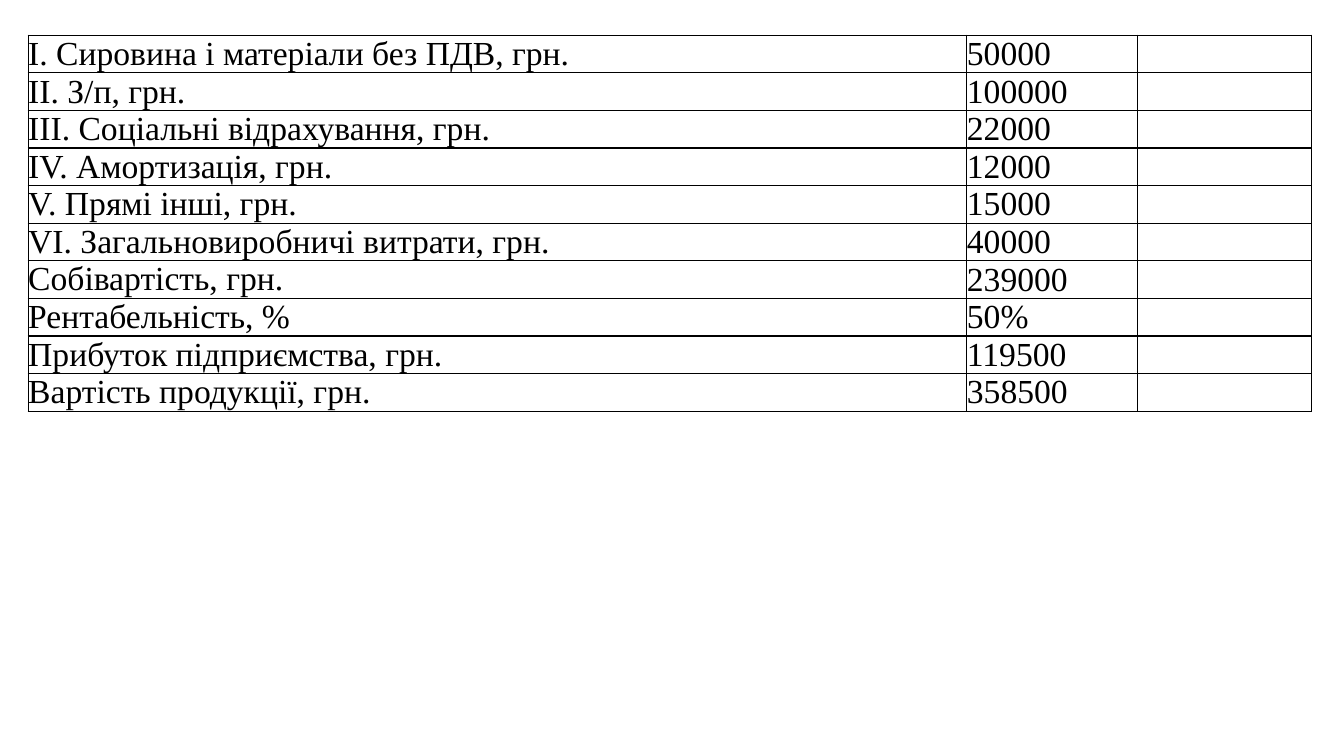
from lxml.etree import SubElement as Sub
from pptx import Presentation
from pptx.dml.color import RGBColor
from pptx.enum.text import MSO_ANCHOR as Anchor
from pptx.oxml.ns import qn
from pptx.util import Inches, Pt

BLACK = RGBColor(0, 0, 0)
COLS = (9.31, 1.69, 1.73)
COSTS = [
    ("І. Сировина і матеріали без ПДВ, грн.", "50000"),
    ("ІІ. З/п, грн.", "100000"),
    ("ІІІ. Соціальні відрахування, грн.", "22000"),
    ("ІV. Амортизація, грн.", "12000"),
    ("V. Прямі інші, грн.", "15000"),
    ("VІ. Загальновиробничі витрати, грн.", "40000"),
    ("Собівартість, грн.", "239000"),
    ("Рентабельність, %", "50%"),
    ("Прибуток підприємства, грн.", "119500"),
    ("Вартість продукції, грн.", "358500"),
]
FONT = {"name": "Times New Roman", "size": Pt(24), "bold": False}
INSET = {f"margin_{side}": 0 for side in ("left", "right", "top", "bottom")}


def assign(item, values):
    """Set each named attribute of an item."""
    for name, value in values.items():
        setattr(item, name, value)


def border(cell):
    """Draw a thin black line on every side of a cell."""
    props = cell._tc.get_or_add_tcPr()
    for spot, side in enumerate(("lnL", "lnR", "lnT", "lnB")):
        line = Sub(props, qn(f"a:{side}"), w=str(Pt(1)))
        fill = Sub(line, qn("a:solidFill"))
        Sub(fill, qn("a:srgbClr"), val=str(BLACK))
        props.insert(spot, line)


def write(cell, text, anchor):
    """Format one cell and fill in its text."""
    assign(cell, {**INSET, "vertical_anchor": anchor})
    cell.fill.background()
    border(cell)
    if text:
        run = cell.text_frame.paragraphs[0].add_run()
        run.text = text
        assign(run.font, FONT)
        run.font.color.rgb = BLACK


def cost_table(slide, left, top, width, height):
    """Place the cost table in the given box, with a blank last column."""
    box = map(Inches, (left, top, width, height))
    table = slide.shapes.add_table(len(COSTS), len(COLS), *box).table
    assign(table, {"first_row": False, "horz_banding": False})
    for col, share in zip(table.columns, COLS):
        col.width = Inches(width * share / sum(COLS))
    for row, (label, value) in enumerate(COSTS):
        last = row == len(COSTS) - 1
        write(table.cell(row, 0), label, Anchor.BOTTOM if last else Anchor.MIDDLE)
        write(table.cell(row, 1), value, Anchor.BOTTOM)
        write(table.cell(row, 2), "", Anchor.TOP)


def main():
    """Build and save the slide."""
    deck = Presentation()
    assign(deck, {"slide_width": Inches(13.33), "slide_height": Inches(7.5)})
    slide = deck.slides.add_slide(deck.slide_layouts[6])
    cost_table(slide, 0.28, 0.35, sum(COLS), 3.73)
    deck.save("out.pptx")


if __name__ == "__main__":
    main()
